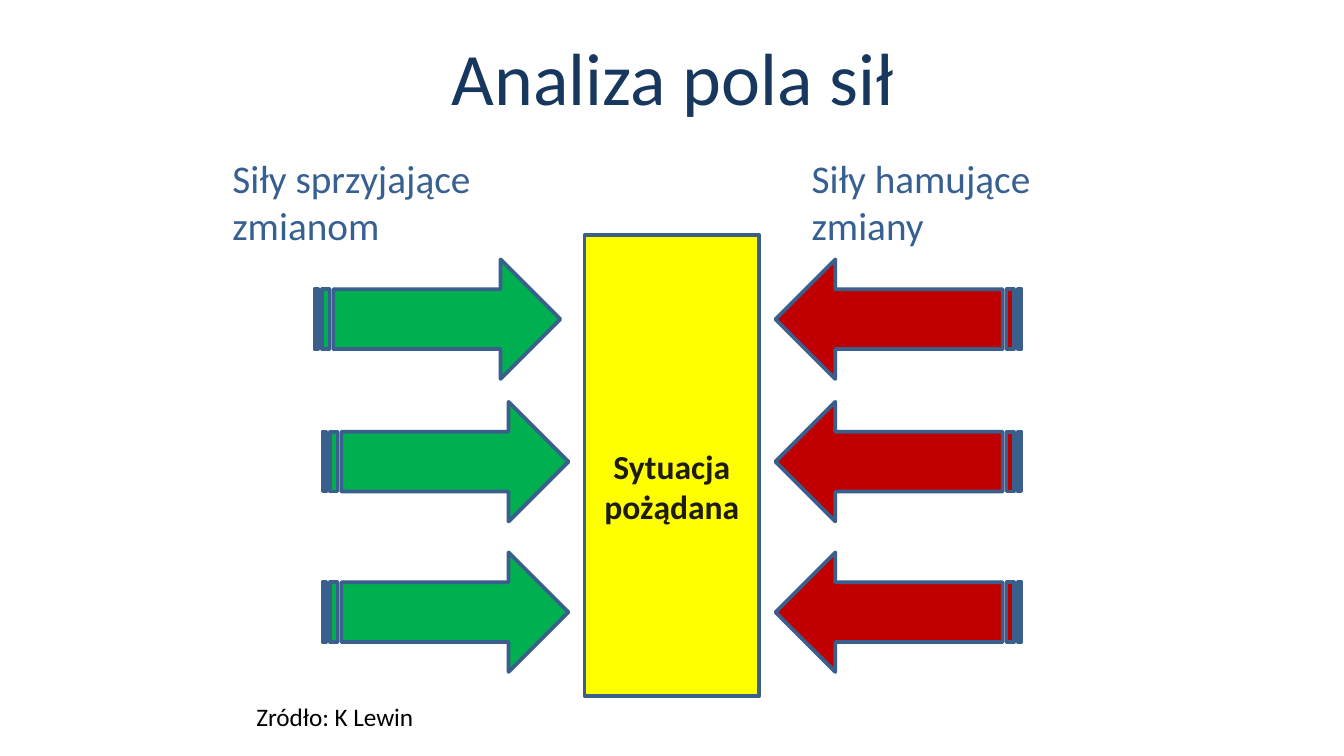
from pptx import Presentation
from pptx.dml.color import RGBColor
from pptx.enum.shapes import MSO_SHAPE as SHAPE
from pptx.enum.text import MSO_ANCHOR as ANCHOR, PP_ALIGN as ALIGN
from pptx.util import Inches, Pt

# Content
TITLE = "Analiza pola sił"
GOAL = "Sytuacja pożądana"
SOURCE = "Zródło: K Lewin"
HEADINGS = [  # text, left, width
    ("Siły sprzyjające zmianom", 1.63, 2.78),
    ("Siły hamujące zmiany", 5.94, 2.13),
]
COLORS = {
    "title": "17375E", "heading": "376092", "goal_text": "1E1C11",
    "source": "000000", "outline": "3A5F8C", "goal": "FFFF00",
    "driving": "00B050", "restraining": "C00000",
}
ROW_TOPS = [1.93, 2.99, 4.11]
FORCES = [  # colour, rotation, left edge in each row
    ("driving", 0, [2.34, 2.4, 2.4]),
    ("restraining", 180, [5.77] * 3),
]
ARROW_W, ARROW_H = 1.83, 0.89


def rgb(name):
    return RGBColor.from_string(COLORS[name])


def write(sp, text, size, color, bold=False, align=ALIGN.LEFT, anchor=ANCHOR.TOP):
    tf = sp.text_frame
    tf.word_wrap = True
    tf.vertical_anchor = anchor
    p = tf.paragraphs[0]
    p.alignment = align
    r = p.add_run()
    r.text = text
    r.font.name = "Calibri"
    r.font.size = Pt(size)
    r.font.bold = bold
    r.font.color.rgb = rgb(color)


def add_block(s, kind, x, y, w, h, fill, rotation=0):
    sp = s.shapes.add_shape(kind, Inches(x), Inches(y), Inches(w), Inches(h))
    sp.rotation = rotation
    sp.shadow.inherit = False
    sp.fill.solid()
    sp.fill.fore_color.rgb = rgb(fill)
    sp.line.color.rgb = rgb("outline")
    sp.line.width = Pt(2)
    return sp


def add_label(s, x, y, w, h, text, size, color):
    sp = s.shapes.add_textbox(Inches(x), Inches(y), Inches(w), Inches(h))
    write(sp, text, size, color)


# Widescreen 16:9 slide
prs = Presentation()
prs.slide_width = Inches(10)
prs.slide_height = Inches(10) * 9 // 16
s = prs.slides.add_slide(prs.slide_layouts[5])

# Title
title = s.shapes.title
title.left, title.top = Inches(1.63), Inches(0.27)
title.width, title.height = Inches(6.75), Inches(0.59)
write(title, TITLE, 39.6, "title", align=ALIGN.CENTER, anchor=ANCHOR.MIDDLE)

# Desired situation, with its text a little below the middle
goal = add_block(s, SHAPE.RECTANGLE, 4.35, 1.75, 1.3, 3.43, "goal")
goal.text_frame.margin_top = Inches(0.35)
write(goal, GOAL, 18, "goal_text", bold=True, align=ALIGN.CENTER, anchor=ANCHOR.MIDDLE)

# Opposing forces
for color, rotation, lefts in FORCES:
    for x, y in zip(lefts, ROW_TOPS):
        add_block(s, SHAPE.STRIPED_RIGHT_ARROW, x, y, ARROW_W, ARROW_H, color, rotation)

# Source and headings
add_label(s, 1.81, 5.17, 1.77, 0.33, SOURCE, 13.5, "source")
for text, x, w in HEADINGS:
    add_label(s, x, 1.1, w, 0.81, text, 21, "heading")

prs.save("out.pptx")
